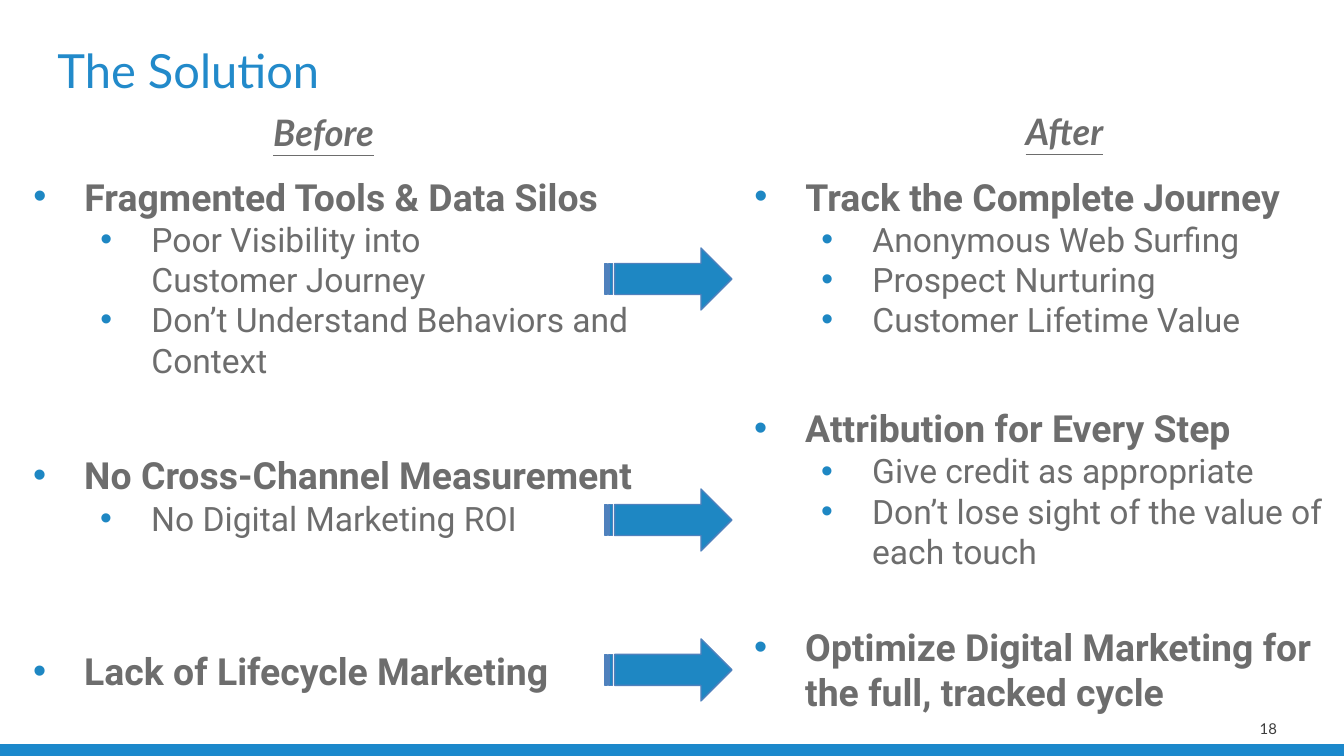
from lxml import etree
from pptx import Presentation
from pptx.dml.color import RGBColor
from pptx.enum.shapes import MSO_SHAPE
from pptx.enum.text import MSO_ANCHOR, MSO_AUTO_SIZE, PP_ALIGN
from pptx.oxml.ns import qn
from pptx.util import Emu, Pt

RECT, ARROW = MSO_SHAPE.RECTANGLE, MSO_SHAPE.STRIPED_RIGHT_ARROW
TOP, MIDDLE = MSO_ANCHOR.TOP, MSO_ANCHOR.MIDDLE
LEFT, CENTER, RIGHT = PP_ALIGN.LEFT, PP_ALIGN.CENTER, PP_ALIGN.RIGHT
NO_FIT = MSO_AUTO_SIZE.NONE
COMPARISON_LAYOUT = 4
SLIDE_W, SLIDE_H = 1344, 756
EMU_PER_PX = 9144000 / SLIDE_W


def px(length):
    return Emu(round(length * EMU_PER_PX))


def rgb(color):
    return RGBColor.from_string(color)


class ComparisonSlide:
    heading_font, body_font = "Lato", "Roboto"
    text_color, title_color, accent = "6D6D6D", "228ACA", "1E87C3"
    indents, hanging = (51, 118), 51
    sizes = (20, 18)

    def __init__(self, prs):
        self.slide = prs.slides.add_slide(prs.slide_layouts[COMPARISON_LAYOUT])

    def frame(self, box, placeholder=None, anchor=TOP):
        """Return an empty text frame, in a placeholder when its index is given."""
        area = [px(v) for v in box]
        if placeholder is None:
            holder = self.slide.shapes.add_textbox(*area)
        else:
            holder = self.slide.placeholders[placeholder]
            holder.left, holder.top, holder.width, holder.height = area
        frame = holder.text_frame
        frame.word_wrap = True
        frame.auto_size = NO_FIT
        frame.vertical_anchor = anchor
        return frame

    def run(self, paragraph, text, size, font, color, bold=False):
        run = paragraph.add_run()
        run.text = text
        run.font.size = Pt(size)
        run.font.name = font
        run.font.bold = bold
        run.font.color.rgb = rgb(color)
        return run

    def title(self, text, box):
        paragraph = self.frame(box, 0, MIDDLE).paragraphs[0]
        paragraph.alignment = LEFT
        self.run(paragraph, text, 25.2, self.heading_font, self.title_color)

    def heading(self, text, box, placeholder):
        paragraph = self.frame(box, placeholder).paragraphs[0]
        paragraph.alignment = CENTER
        paragraph.space_before = Pt(0)
        run = self.run(paragraph, text, 19.5, self.heading_font, self.text_color, True)
        run.font.italic = run.font.underline = True

    def bullet(self, paragraph, level):
        paragraph.level = level
        paragraph.space_before = Pt(0)
        props = paragraph._p.get_or_add_pPr()
        props.set("marL", str(px(self.indents[level])))
        props.set("indent", str(-px(self.hanging)))
        color = etree.SubElement(props, qn("a:buClr"))
        etree.SubElement(color, qn("a:srgbClr"), val=self.accent)
        etree.SubElement(props, qn("a:buFont"), typeface="Arial")
        etree.SubElement(props, qn("a:buChar"), char="•")

    def points(self, lead, details, box, placeholder=None):
        """Write a bold lead point and its indented details; a newline breaks a line."""
        frame = self.frame(box, placeholder)
        for i, text in enumerate([lead, *details]):
            paragraph = frame.add_paragraph() if i else frame.paragraphs[0]
            level = min(i, 1)
            self.bullet(paragraph, level)
            for n, line in enumerate(text.split("\n")):
                if n:
                    paragraph.add_line_break()
                self.run(paragraph, line, self.sizes[level], self.body_font,
                         self.text_color, level == 0)

    def shape(self, kind, box, fill, line):
        shape = self.slide.shapes.add_shape(kind, *[px(v) for v in box])
        shape.shadow.inherit = False
        shape.fill.solid()
        shape.fill.fore_color.rgb = rgb(fill)
        shape.line.color.rgb = rgb(line)
        shape.line.width = Pt(0.75)

    def page_number(self, number, box):
        frame = self.frame(box, anchor=MIDDLE)
        frame.margin_left = frame.margin_right = 0
        frame.margin_top = frame.margin_bottom = 0
        frame.paragraphs[0].alignment = RIGHT
        self.run(frame.paragraphs[0], number, 8, self.heading_font, "3C3C3C")


def main():
    prs = Presentation()
    prs.slide_width, prs.slide_height = px(SLIDE_W), px(SLIDE_H)
    page = ComparisonSlide(prs)

    for top, height in ((745, 11), (749, 7)):
        page.shape(RECT, (0, top, SLIDE_W, height), "1A89CD", "1D88CA")
    page.page_number("18", (1176, 720, 101, 17))

    page.title("The Solution", (44, 36, 1249, 67))
    page.heading("Before", (237, 103, 173, 67), 1)
    page.heading("After", (978, 102, 173, 67), 3)

    before_left, after_left = 20, 741
    before = [
        ("Fragmented Tools & Data Silos",
         ["Poor Visibility into\nCustomer Journey",
          "Don’t Understand Behaviors and Context"], 167, 628, 284, 2),
        ("No Cross-Channel Measurement", ["No Digital Marketing ROI"], 446, 680, 99, None),
        ("Lack of Lifecycle Marketing", [], 642, 648, 59, None),
    ]
    after = [
        ("Track the Complete Journey",
         ["Anonymous Web Surfing", "Prospect Nurturing", "Customer Lifetime Value"],
         167, 603, 284, 4),
        ("Attribution for Every Step",
         ["Give credit as appropriate", "Don’t lose sight of the value of each touch"],
         399, 603, 202, None),
        ("Optimize Digital Marketing for the full, tracked cycle", [], 618, 593, 103, None),
    ]
    for left, column in ((before_left, before), (after_left, after)):
        for lead, details, top, width, height, placeholder in column:
            page.points(lead, details, (left, top, width, height), placeholder)

    for top in (248, 489, 639):
        page.shape(ARROW, (605, top, 127, 62), page.accent, "4F81BD")

    prs.save("out.pptx")


if __name__ == "__main__":
    main()
